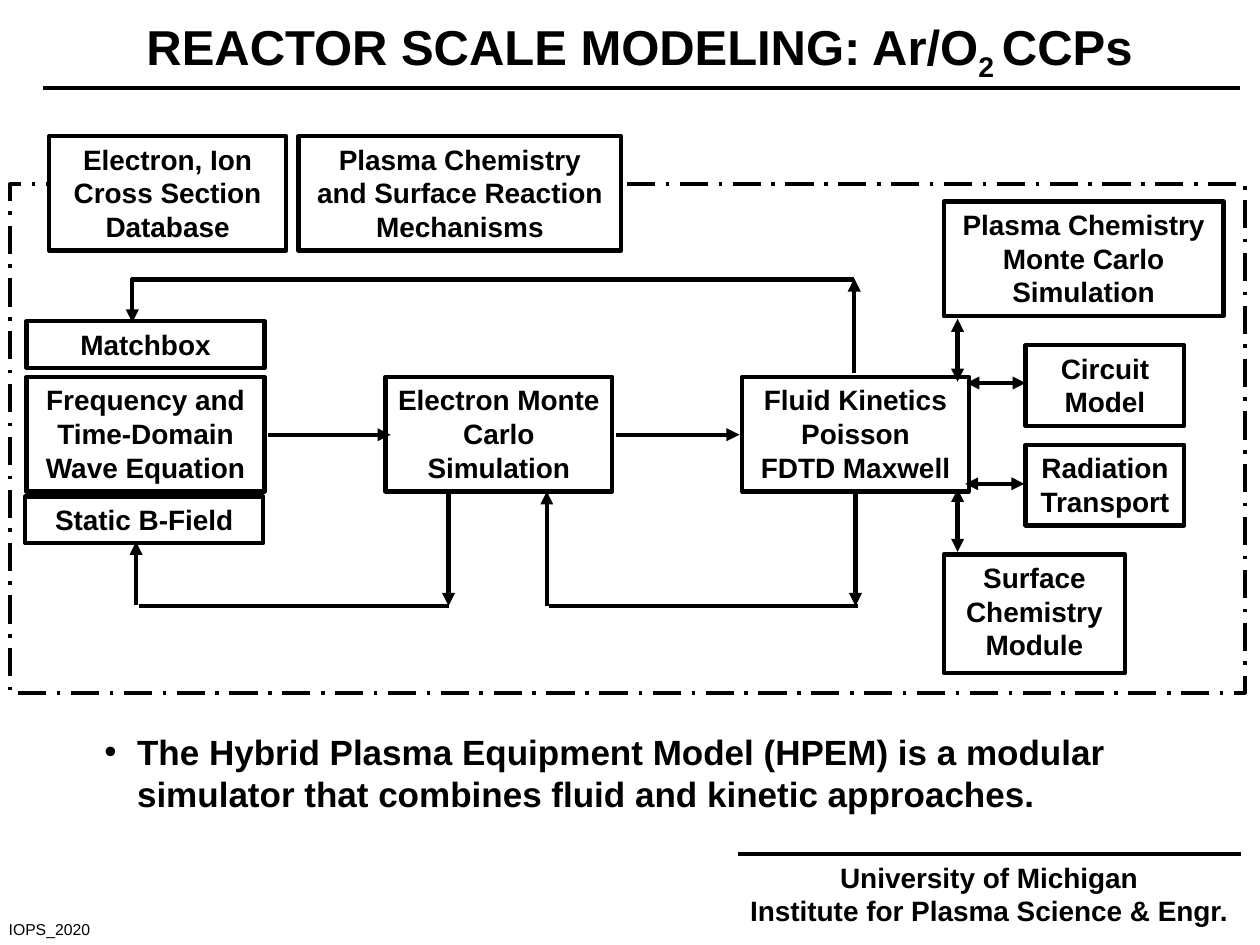
from dataclasses import dataclass

from lxml import etree
from pptx import Presentation
from pptx.dml.color import RGBColor
from pptx.enum.dml import MSO_LINE
from pptx.enum.shapes import MSO_CONNECTOR, MSO_SHAPE
from pptx.enum.text import MSO_ANCHOR, MSO_AUTO_SIZE, PP_ALIGN
from pptx.oxml.ns import qn
from pptx.util import Inches, Pt

RECT = MSO_SHAPE.RECTANGLE
STRAIGHT = MSO_CONNECTOR.STRAIGHT
LONG_DASH_DOT = MSO_LINE.LONG_DASH_DOT
TOP = MSO_ANCHOR.TOP
GROW = MSO_AUTO_SIZE.SHAPE_TO_FIT_TEXT
CENTER, LEFT = PP_ALIGN.CENTER, PP_ALIGN.LEFT


@dataclass(frozen=True)
class Theme:
    ink: RGBColor = RGBColor(0, 0, 0)
    paper: RGBColor = RGBColor(255, 255, 255)
    font: str = "Arial"
    title: float = 28
    bullet: float = 20
    label: float = 16
    tag: float = 9
    rule: float = 2.25
    flow: float = 2.5
    frame: float = 2


THEME = Theme()

# Module boxes: left, top, width, height, lines of text
MODULES = [
    (7.49, 1.6, 2.22, 0.91, ["Plasma Chemistry", "Monte Carlo Simulation"]),
    (7.49, 4.4, 1.44, 0.94, ["Surface", "Chemistry", "Module"]),
    (0.39, 1.08, 1.88, 0.91, ["Electron, Ion Cross Section Database"]),
    (2.37, 1.08, 2.56, 0.91, ["Plasma Chemistry and Surface Reaction Mechanisms"]),
    (0.21, 2.55, 1.89, 0.37, ["Matchbox"]),
    (0.21, 2.99, 1.89, 0.91, ["Frequency and Time-Domain Wave Equation"]),
    (0.2, 3.94, 1.89, 0.37, ["Static B-Field"]),
    (3.06, 2.99, 1.8, 0.91, ["Electron Monte Carlo Simulation"]),
    (5.89, 2.99, 1.8, 0.91, ["Fluid Kinetics", "Poisson", "FDTD Maxwell"]),
    (8.14, 2.74, 1.26, 0.64, ["Circuit Model"]),
    (8.14, 3.53, 1.26, 0.64, ["Radiation Transport"]),
]

# Flow lines by arrowheads: x1, y1, x2, y2
PLAIN_FLOWS = [
    (4.36, 4.81, 6.81, 4.81),
    (1.1, 4.81, 3.56, 4.81),
    (1.04, 2.22, 6.78, 2.22),
]
ONE_WAY_FLOWS = [
    (2.13, 3.45, 3.1, 3.45),
    (4.89, 3.45, 5.87, 3.45),
    (3.56, 3.9, 3.56, 4.81),
    (4.34, 4.81, 4.34, 3.9),
    (6.79, 3.9, 6.79, 4.81),
    (6.78, 2.96, 6.78, 2.21),
    (1.08, 4.8, 1.08, 4.3),
    (1.05, 2.21, 1.05, 2.56),
]
TWO_WAY_FLOWS = [
    (7.67, 3.04, 8.14, 3.04),
    (7.66, 3.84, 8.13, 3.84),
    (7.6, 2.53, 7.6, 3.03),
    (7.6, 3.88, 7.6, 4.38),
]


def style_font(font, size, bold=True):
    formats = {"name": THEME.font, "size": Pt(size), "bold": bold}
    for name, value in formats.items():
        setattr(font, name, value)
    font.color.rgb = THEME.ink


def write_lines(frame, lines, size, align=CENTER, bold=True, wrap=True):
    formats = {"word_wrap": wrap, "auto_size": GROW, "vertical_anchor": TOP}
    for name, value in formats.items():
        setattr(frame, name, value)
    for index, line in enumerate(lines):
        paragraph = frame.paragraphs[0] if index == 0 else frame.add_paragraph()
        paragraph.alignment = align
        run = paragraph.add_run()
        run.text = line
        style_font(run.font, size, bold)


def add_text(slide, place, lines, size, **options):
    box = slide.shapes.add_textbox(*map(Inches, place))
    write_lines(box.text_frame, lines, size, **options)
    return box.text_frame.paragraphs[0]


def add_box(slide, place, width):
    box = slide.shapes.add_shape(RECT, *map(Inches, place))
    box.shadow.inherit = False
    box.line.color.rgb = THEME.ink
    box.line.width = Pt(width)
    return box


def add_module(slide, place, lines):
    box = add_box(slide, place, THEME.flow)
    box.fill.solid()
    box.fill.fore_color.rgb = THEME.paper
    write_lines(box.text_frame, lines, THEME.label)


def add_line(slide, ends, width, arrows=()):
    line = slide.shapes.add_connector(STRAIGHT, *map(Inches, ends))
    line.line.color.rgb = THEME.ink
    line.line.width = Pt(width)
    outline = line.line._get_or_add_ln()
    for end in arrows:
        etree.SubElement(outline, qn(f"a:{end}"), type="triangle")
    etree.SubElement(line._element.spPr, qn("a:effectLst"))


def add_title(slide):
    title = add_text(slide, (0.95, 0.08, 8.25, 0.57),
                     ["REACTOR SCALE MODELING: Ar/O"], THEME.title, wrap=False)
    for text, baseline in (("2 ", -25000), ("CCPs", 0)):
        run = title.add_run()
        run.text = text
        style_font(run.font, THEME.title)
        run._r.get_or_add_rPr().set("baseline", str(baseline))
    add_line(slide, (0.34, 0.7, 9.84, 0.7), THEME.rule)


def add_diagram(slide):
    frame = add_box(slide, (0.08, 1.46, 9.8, 4.04), THEME.frame)
    frame.fill.background()
    frame.line.dash_style = LONG_DASH_DOT
    for *place, lines in MODULES:
        add_module(slide, place, lines)
    for flows, arrows in ((PLAIN_FLOWS, ()),
                          (ONE_WAY_FLOWS, ("tailEnd",)),
                          (TWO_WAY_FLOWS, ("headEnd", "tailEnd"))):
        for ends in flows:
            add_line(slide, ends, THEME.flow, arrows)


def add_summary(slide):
    summary = add_text(
        slide, (0.73, 5.75, 8.83, 0.77),
        ["The Hybrid Plasma Equipment Model (HPEM) is a modular simulator "
         "that combines fluid and kinetic approaches."],
        THEME.bullet, align=LEFT)
    properties = summary._p.get_or_add_pPr()
    indent = Inches(0.26)
    properties.set("marL", str(indent))
    properties.set("indent", str(-indent))
    etree.SubElement(properties, qn("a:buFont"), typeface=THEME.font)
    etree.SubElement(properties, qn("a:buChar"), char="•")


def add_footer(slide):
    add_line(slide, (5.86, 6.78, 9.85, 6.78), THEME.rule)
    add_text(slide, (5.79, 6.78, 4.12, 0.64),
             ["University of Michigan", "Institute for Plasma Science & Engr."],
             THEME.label)
    add_text(slide, (-0.03, 7.25, 1.98, 0.25), ["IOPS_2020"], THEME.tag,
             align=LEFT, bold=False)


def main():
    deck = Presentation()
    deck.slide_width, deck.slide_height = Inches(10), Inches(7.5)
    slide = deck.slides.add_slide(deck.slide_layouts[6])
    add_title(slide)
    add_diagram(slide)
    add_summary(slide)
    add_footer(slide)
    deck.save("out.pptx")


if __name__ == "__main__":
    main()
